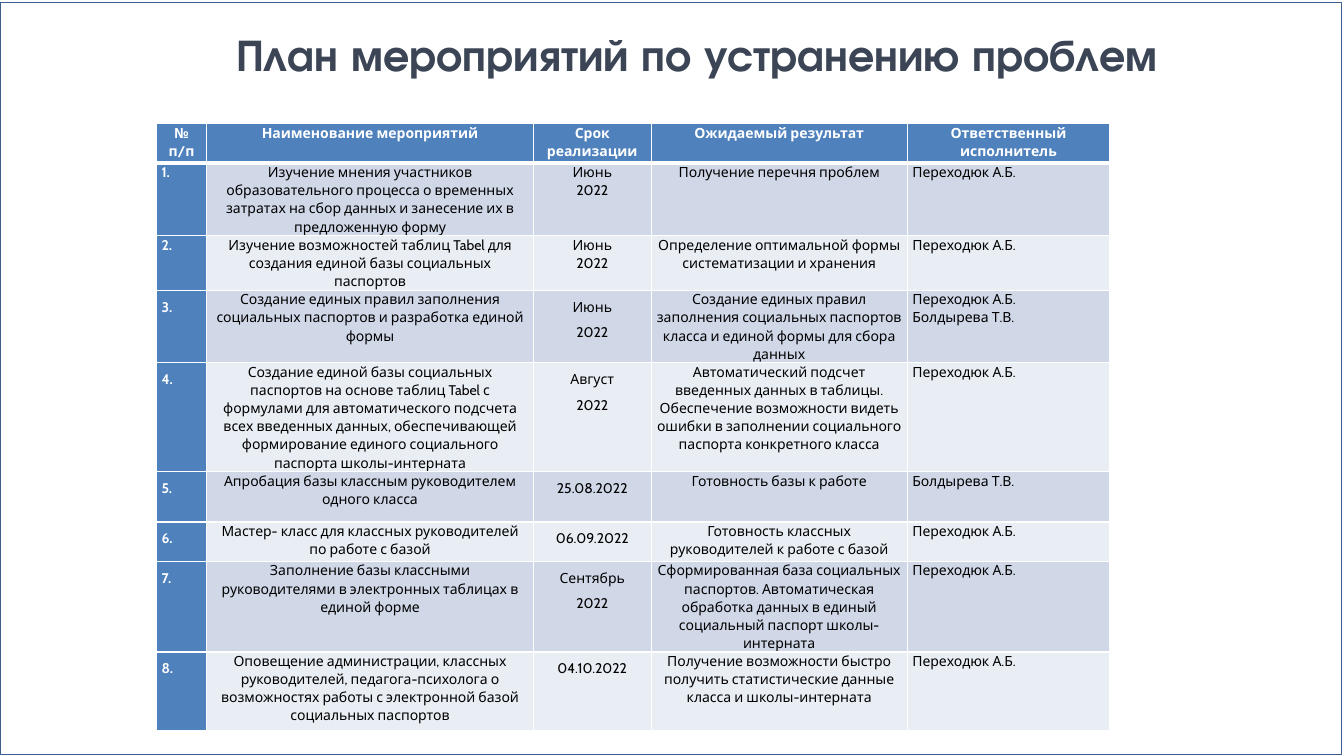
import lxml.etree
import pptx
import pptx.dml.color
import pptx.enum.shapes
import pptx.enum.text
import pptx.oxml.ns
import pptx.util

Cm = pptx.util.Cm
Pt = pptx.util.Pt
RGB = pptx.dml.color.RGBColor
ALIGN = pptx.enum.text.PP_ALIGN
ANCHOR = pptx.enum.text.MSO_ANCHOR
qn = pptx.oxml.ns.qn

WHITE = RGB(0xFF, 0xFF, 0xFF)
BLACK = RGB(0x00, 0x00, 0x00)
SLATE = RGB(0x3B, 0x45, 0x55)
NAVY = RGB(0x3A, 0x5F, 0x8C)
BLUE = RGB(0x4F, 0x81, 0xBD)
BANDS = (RGB(0xD0, 0xD8, 0xE8), RGB(0xE9, 0xED, 0xF4))

TITLE_FONT = {"name": "TeX Gyre Adventor", "size": Pt(32), "bold": True}
HEAD_FONT = {"name": "Cabin", "size": Pt(10), "bold": True}
BODY_FONT = {"name": "Cabin", "size": Pt(10), "bold": False}

COL_WIDTHS = (1.27, 8.23, 2.97, 6.45, 5.11)
ROW_HEIGHTS = (0.99, 1.65, 1.32, 1.78, 2.64, 1.27, 0.99, 1.98, 1.98)
TIGHT, LOOSE = 1.07, 1.5
FIRST_LOOSE_ROW = 3
NUMBER_COL, DATE_COL, PERSON_COL = 0, 2, 4

HEADINGS = ("№ п/п", "Наименование мероприятий", "Срок реализации",
            "Ожидаемый результат", "Ответственный исполнитель")
ACTIVITIES = (
    ("Изучение мнения участников образовательного процесса о временных затратах "
     "на сбор данных и занесение их в предложенную форму",
     "Июнь\n2022", "Получение перечня проблем", "Переходюк А.Б."),
    ("Изучение возможностей таблиц Tabel для создания единой базы социальных паспортов",
     "Июнь\n2022", "Определение оптимальной формы систематизации и хранения",
     "Переходюк А.Б."),
    ("Создание единых правил заполнения социальных паспортов и разработка единой формы",
     "Июнь\n2022",
     "Создание единых правил заполнения социальных паспортов класса и единой формы "
     "для сбора данных", "Переходюк А.Б.\nБолдырева Т.В."),
    ("Создание единой базы социальных паспортов на основе таблиц Tabel с формулами для "
     "автоматического подсчета всех введенных данных, обеспечивающей формирование "
     "единого социального паспорта школы-интерната",
     "Август\n2022",
     "Автоматический подсчет введенных данных в таблицы. Обеспечение возможности видеть "
     "ошибки в заполнении социального паспорта конкретного класса", "Переходюк А.Б."),
    ("Апробация базы классным руководителем одного класса",
     "25.08.2022", "Готовность базы к работе", "Болдырева Т.В."),
    ("Мастер- класс для классных руководителей по работе с базой",
     "06.09.2022", "Готовность классных руководителей к работе с базой",
     "Переходюк А.Б."),
    ("Заполнение базы классными руководителями в электронных таблицах в единой форме",
     "Сентябрь\n2022",
     "Сформированная база социальных паспортов. Автоматическая обработка данных в единый "
     "социальный паспорт школы-интерната", "Переходюк А.Б."),
    ("Оповещение администрации, классных руководителей, педагога-психолога о возможностях "
     "работы с электронной базой социальных паспортов",
     "04.10.2022",
     "Получение возможности быстро получить статистические данные класса и "
     "школы-интерната", "Переходюк А.Б."),
)


class PlanSlide:
    """Holds the style and the current slide, and draws each kind of element."""

    def __init__(self, prs):
        self.s = prs.slides.add_slide(prs.slide_layouts[5])

    def apply(self, target, values):
        for name, value in values.items():
            setattr(target, name, value)

    def text(self, tf, text, font, color, align, spacing):
        for i, line in enumerate(text.split("\n")):
            p = tf.paragraphs[0] if i == 0 else tf.add_paragraph()
            self.apply(p, {"alignment": align, "line_spacing": spacing,
                           "space_before": Pt(0), "space_after": Pt(0)})
            r = p.add_run()
            r.text = line
            self.apply(r.font, font)
            r.font.color.rgb = color

    def frame(self, left, top, width, height):
        sp = self.s.shapes.add_shape(pptx.enum.shapes.MSO_SHAPE.RECTANGLE,
                                     Cm(left), Cm(top), Cm(width), Cm(height))
        sp.shadow.inherit = False
        sp.fill.background()
        sp.line.color.rgb = NAVY
        sp.line.width = Pt(0.25)

    def title(self, text, left, top, width, height):
        sp = self.s.shapes.title
        self.apply(sp, {"left": Cm(left), "top": Cm(top),
                        "width": Cm(width), "height": Cm(height)})
        tf = sp.text_frame
        self.apply(tf, {"word_wrap": True, "vertical_anchor": ANCHOR.MIDDLE,
                        "auto_size": pptx.enum.text.MSO_AUTO_SIZE.NONE,
                        "margin_left": Cm(0.1), "margin_right": Cm(0.1),
                        "margin_top": Cm(0.1), "margin_bottom": Cm(0.1)})
        self.text(tf, text, TITLE_FONT, SLATE, ALIGN.CENTER, 1.0)

    def borders(self, cell, widths):
        tc_pr = cell._tc.get_or_add_tcPr()
        for side, width in widths.items():
            ln = lxml.etree.SubElement(tc_pr, qn(f"a:ln{side}"), w=str(Pt(width)))
            fill = lxml.etree.SubElement(ln, qn("a:solidFill"))
            lxml.etree.SubElement(fill, qn("a:srgbClr"), val=str(WHITE))

    def cell(self, cell, text, row, col):
        head = row == 0
        strong = head or col == NUMBER_COL
        loose = row >= FIRST_LOOSE_ROW and col in (NUMBER_COL, DATE_COL)
        left = not head and col in (NUMBER_COL, PERSON_COL)
        self.borders(cell, {"L": 1, "R": 1, "T": 3 if row == 1 else 1,
                            "B": 3 if head else 1})
        cell.fill.solid()
        cell.fill.fore_color.rgb = BLUE if strong else BANDS[(row - 1) % 2]
        self.apply(cell, {"margin_left": Cm(0.13), "margin_right": Cm(0.13),
                          "margin_top": 0, "margin_bottom": 0,
                          "vertical_anchor": ANCHOR.TOP})
        self.text(cell.text_frame, text, HEAD_FONT if strong else BODY_FONT,
                  WHITE if strong else BLACK,
                  ALIGN.LEFT if left else ALIGN.CENTER, LOOSE if loose else TIGHT)

    def table(self, rows, left, top):
        tbl = self.s.shapes.add_table(
            len(rows), len(COL_WIDTHS), Cm(left), Cm(top),
            Cm(sum(COL_WIDTHS)), Cm(sum(ROW_HEIGHTS))).table
        tbl.horz_banding = False
        for column, width in zip(tbl.columns, COL_WIDTHS):
            column.width = Cm(width)
        for i, (row, height) in enumerate(zip(rows, ROW_HEIGHTS)):
            tbl.rows[i].height = Cm(height)
            for j, text in enumerate(row):
                self.cell(tbl.cell(i, j), text, i, j)


def main():
    prs = pptx.Presentation()
    prs.slide_width, prs.slide_height = Cm(33.87), Cm(19.05)
    plan = PlanSlide(prs)
    plan.frame(0, 0.05, 33.81, 18.95)
    plan.title("План мероприятий по устранению проблем", 2.64, 0.2, 29.87, 2.31)
    numbered = [(f"{n}.", *activity) for n, activity in enumerate(ACTIVITIES, 1)]
    plan.table([HEADINGS, *numbered], 3.94, 3.12)
    prs.save("out.pptx")


if __name__ == "__main__":
    main()
